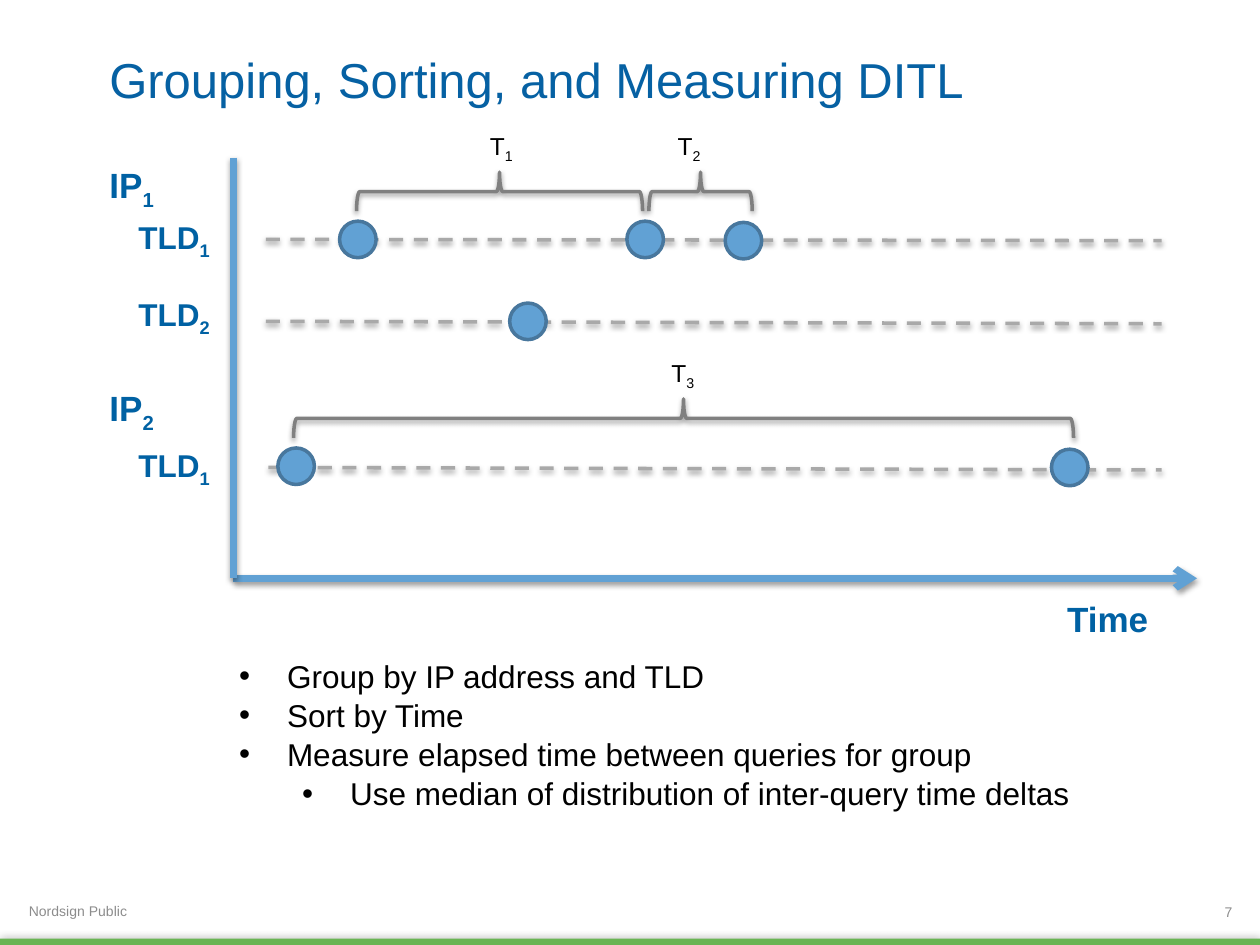
import dataclasses

import lxml.etree
import pptx
import pptx.dml.color
import pptx.enum.dml
import pptx.enum.shapes
import pptx.enum.text
import pptx.oxml.ns
import pptx.util

SHAPE = pptx.enum.shapes.MSO_SHAPE
ALIGN = pptx.enum.text.PP_ALIGN
ANCHOR = pptx.enum.text.MSO_ANCHOR
DASH = pptx.enum.dml.MSO_LINE.DASH


@dataclasses.dataclass(frozen=True)
class Theme:
    face: str = "Arial"
    title: str = "0661A3"
    label: str = "0061A3"
    ink: str = "000000"
    mute: str = "8C8C8C"
    axis: str = "61A1D4"
    rim: str = "48779D"
    lane: str = "A9A9A9"
    brace: str = "808080"
    bar: str = "69B453"
    head: int = 28
    group: int = 20
    body: int = 18
    mark: int = 14
    foot: int = 8


def color(code):
    return pptx.dml.color.RGBColor.from_string(code)


def child(node, tag, **attrs):
    new = lxml.etree.SubElement(node, pptx.oxml.ns.qn("a:" + tag))
    for key, value in attrs.items():
        new.set(key, str(value))
    return new


def shade(shape, alpha=38, blur=3.1, dist=1.6, angle=90):
    """Add an outer shadow; call it after the line is set."""
    old = shape._element.spPr.find(pptx.oxml.ns.qn("a:effectLst"))
    if old is not None:
        shape._element.spPr.remove(old)
    outer = child(child(shape._element.spPr, "effectLst"), "outerShdw",
                  blurRad=pptx.util.Pt(blur), dist=pptx.util.Pt(dist),
                  dir=angle * 60000, rotWithShape=0)
    child(child(outer, "srgbClr", val="000000"), "alpha", val=alpha * 1000)


class Deck:
    """Places things on a grid of 100 columns and 75 rows."""

    def __init__(self, theme):
        self.theme = theme
        self.show = pptx.Presentation()
        self.show.slide_width = pptx.util.Inches(10)
        self.show.slide_height = pptx.util.Inches(7.5)
        self.cell = self.show.slide_width / 100
        self.slide = self.show.slides.add_slide(self.show.slide_layouts[6])

    def at(self, *cells):
        return [round(n * self.cell) for n in cells]

    def run(self, para, text, tint, **form):
        run = para.add_run()
        run.text = text
        for key, value in {"name": self.theme.face, **form}.items():
            setattr(run.font, key, value)
        run.font.color.rgb = color(tint)
        return run

    def frame(self, box, **form):
        frame = self.slide.shapes.add_textbox(*self.at(*box)).text_frame
        for key, value in {"word_wrap": True, **form}.items():
            setattr(frame, key, value)
        return frame

    def text(self, box, text, size, tint, sub="", bold=False,
             align=ALIGN.LEFT, anchor=ANCHOR.TOP):
        para = self.frame(box, vertical_anchor=anchor).paragraphs[0]
        para.alignment = align
        form = {"size": pptx.util.Pt(size), "bold": bold}
        self.run(para, text, tint, **form)
        if sub:
            low = self.run(para, sub, tint, **form)
            low._r.get_or_add_rPr().set("baseline", "-25000")

    def bullets(self, box, items):
        frame = self.frame(box)
        for i, (level, text) in enumerate(items):
            para = frame.add_paragraph() if i else frame.paragraphs[0]
            props = para._p.get_or_add_pPr()
            props.set("marL", str(pptx.util.Inches(0.38 + level / 2)))
            props.set("indent", str(pptx.util.Inches(-0.38)))
            child(props, "buFont", typeface=self.theme.face)
            child(props, "buChar", char="•")
            para.level, para.line_spacing = level, 1.04
            self.run(para, text, self.theme.ink,
                     size=pptx.util.Pt(self.theme.body))

    def line(self, ends, tint, width, dash=None, arrow=False):
        kind = pptx.enum.shapes.MSO_CONNECTOR.STRAIGHT
        line = self.slide.shapes.add_connector(kind, *self.at(*ends))
        line.line.color.rgb = color(tint)
        line.line.width = pptx.util.Pt(width)
        if dash:
            line.line.dash_style = dash
        if arrow:
            child(line.line._get_or_add_ln(), "tailEnd", type="arrow")
        shade(line)

    def shape(self, kind, box, fill=None, rim=None):
        shape = self.slide.shapes.add_shape(kind, *self.at(*box))
        shape.shadow.inherit = False
        if fill:
            shape.fill.solid()
            shape.fill.fore_color.rgb = color(fill)
        else:
            shape.fill.background()
        if rim:
            shape.line.color.rgb = color(rim)
            shape.line.width = pptx.util.Pt(2)
        else:
            shape.line.fill.background()
        return shape

    def dot(self, x, y, size=2.9):
        box = (x - size / 2, y - size / 2, size, size)
        self.shape(SHAPE.OVAL, box, self.theme.axis, self.theme.rim)

    def brace(self, left, right, mid, deep=3.1):
        """A brace that spans left to right with its tip up."""
        span = right - left
        box = ((left + right - deep) / 2, mid - span / 2, deep, span)
        brace = self.shape(SHAPE.RIGHT_BRACE, box, rim=self.theme.brace)
        brace.rotation = 270
        shade(brace)


def main():
    theme = Theme()
    deck = Deck(theme)
    bar = deck.shape(SHAPE.RECTANGLE, (0, 74.5, 100, 0.5), theme.bar)
    shade(bar, 40, 5, 0, 0)
    deck.text((1.3, 71.3, 33.2, 2), "Nordsign Public", theme.foot, theme.mute,
              anchor=ANCHOR.MIDDLE)
    deck.text((94.9, 71.5, 3.9, 1.7), "7", theme.foot, theme.mute,
              align=ALIGN.RIGHT, anchor=ANCHOR.MIDDLE)
    deck.text((7.7, 3.2, 92.3, 6.1), "Grouping, Sorting, and Measuring DITL",
              theme.head, theme.title, anchor=ANCHOR.MIDDLE)

    left, base = 18.5, 45.9
    deck.line((left, base, 95, base), theme.axis, 4, arrow=True)
    deck.text((83.7, 46.9, 8.5, 4.4), "Time", theme.group, theme.label,
              bold=True)
    for sub, top in (("1", 12.5), ("2", 30.2)):
        deck.text((7.7, top, 8.5, 4.4), "IP", theme.group, theme.label, sub,
                  bold=True)

    # Each lane: subscript, label top, line start, line row, end row, queries
    lanes = (
        ("1", 16.8, 21.1, 19, 19.1, ((28.4, 19), (51.2, 19), (59, 19.1))),
        ("2", 22.9, 21.1, 25.5, 25.7, ((41.9, 25.5),)),
        ("1", 34.9, 21.3, 37.1, 37.3, ((23.5, 37), (84.9, 37.1))),
    )
    for sub, top, start, row, end, _ in lanes:
        deck.text((10, top, 8.5, 4), "TLD", theme.body, theme.label, sub,
                  bold=True)
        deck.line((start, row, 92.2, end), theme.lane, 2, DASH.DASH)
    deck.line((left, 12.5, left, base), theme.axis, 4)
    for lane in lanes:
        for x, y in lane[-1]:
            deck.dot(x, y)

    # Each gap: subscript, brace left, right and middle, label left and top
    gaps = (
        ("1", 28.3, 51, 15.2, 37.9, 9.9),
        ("2", 51.5, 59.7, 15.2, 52.8, 9.9),
        ("3", 23.3, 85.2, 33.2, 52.3, 27.9),
    )
    for sub, start, end, mid, x, y in gaps:
        deck.brace(start, end, mid)
        deck.text((x, y, 4.9, 3.4), "T", theme.mark, theme.ink, sub)

    deck.bullets((18, 51.5, 72.5, 13.1), (
        (0, "Group by IP address and TLD"),
        (0, "Sort by Time"),
        (0, "Measure elapsed time between queries for group"),
        (1, "Use median of distribution of inter-query time deltas"),
    ))
    deck.show.save("out.pptx")


if __name__ == "__main__":
    main()
